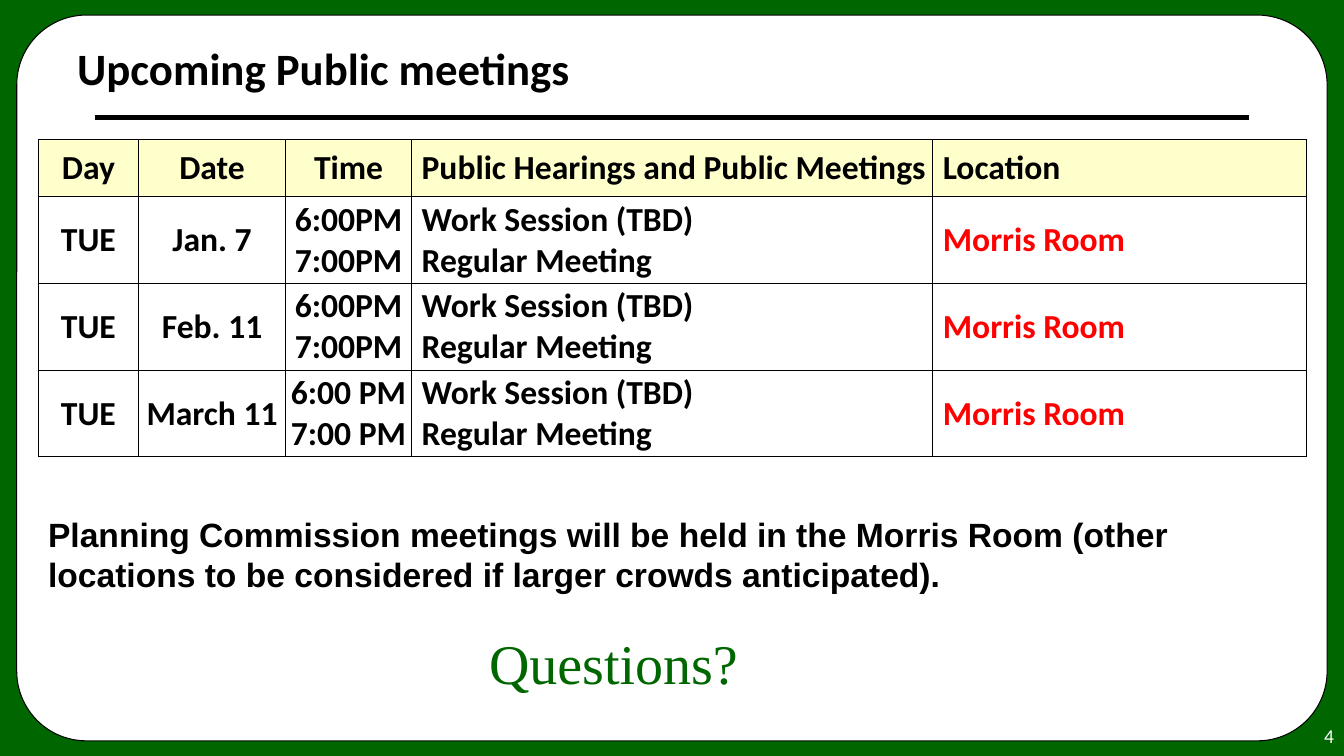
from lxml import etree
from pptx import Presentation
from pptx.dml.color import RGBColor
from pptx.enum import shapes, text
from pptx.oxml import ns
from pptx.util import Pt

GREEN = RGBColor(0x00, 0x66, 0x00)
CREAM = RGBColor(0xFF, 0xFF, 0xCC)
WHITE = RGBColor(0xFF, 0xFF, 0xFF)
BLACK = RGBColor(0x00, 0x00, 0x00)
RED = RGBColor(0xFF, 0x00, 0x00)

LEFT, CENTER, RIGHT = text.PP_ALIGN.LEFT, text.PP_ALIGN.CENTER, text.PP_ALIGN.RIGHT
TOP, MIDDLE = text.MSO_ANCHOR.TOP, text.MSO_ANCHOR.MIDDLE

COLUMN_WIDTHS = [71.7, 105, 90, 372.3, 267]
HEADER_HEIGHT, MEETING_HEIGHT = 40.4, 62
CENTERED_COLUMNS = 3
HEADINGS = ["Day", "Date", "Time", "Public Hearings and Public Meetings", "Location"]
SESSIONS = "Work Session (TBD)\nRegular Meeting"
MEETINGS = [
    ["TUE", date, times, SESSIONS, "Morris Room"]
    for date, times in [
        ("Jan. 7", "6:00PM\n7:00PM"),
        ("Feb. 11", "6:00PM\n7:00PM"),
        ("March 11", "6:00 PM\n7:00 PM"),
    ]
]


def write_text(frame, content, size=24, font="Calibri", color=BLACK, bold=False, align=LEFT):
    """Fill a text frame, one paragraph for each line of the content."""
    for index, line in enumerate(content.split("\n")):
        paragraph = frame.paragraphs[0] if index == 0 else frame.add_paragraph()
        paragraph.alignment = align
        run = paragraph.add_run()
        run.text = line
        run.font.name = font
        run.font.size = Pt(size)
        run.font.bold = bold
        run.font.color.rgb = color


def add_text(slide, box, content, anchor=TOP, wrap=True, **text_format):
    frame = slide.shapes.add_textbox(*map(Pt, box)).text_frame
    frame.word_wrap = wrap
    frame.vertical_anchor = anchor
    write_text(frame, content, **text_format)


def add_filled_shape(slide, preset, box, color):
    shape = slide.shapes.add_shape(preset, *map(Pt, box))
    shape.shadow.inherit = False
    shape.fill.solid()
    shape.fill.fore_color.rgb = color
    return shape


def add_border(slide, box):
    """Draw the green frame and the rounded white page inside it."""
    left, top, width, height = box
    frame = add_filled_shape(slide, shapes.MSO_SHAPE.FRAME, box, GREEN)
    frame.line.fill.background()
    page_box = (left + 12, top + 10.8, width - 24, height - 21.6)
    page = add_filled_shape(slide, shapes.MSO_SHAPE.ROUNDED_RECTANGLE, page_box, WHITE)
    page.adjustments[0] = 0.096
    page.line.color.rgb = BLACK
    page.line.width = Pt(0.75)


def add_heading(slide, box):
    """Write the title and draw the rule below it."""
    left, top, width, height = box
    add_text(slide, box, "Upcoming Public meetings", anchor=MIDDLE, size=32, bold=True)
    rule_top = Pt(top + height + 6)
    rule = slide.shapes.add_connector(
        shapes.MSO_CONNECTOR.STRAIGHT, Pt(left + 20), rule_top, Pt(left + width - 2), rule_top)
    rule.line.color.rgb = BLACK
    rule.line.width = Pt(3)
    etree.SubElement(rule._element.spPr, ns.qn("a:effectLst"))


def set_cell_borders(cell, color, width):
    properties = cell._tc.get_or_add_tcPr()
    for position, side in enumerate(["lnL", "lnR", "lnT", "lnB"]):
        line = etree.Element(ns.qn(f"a:{side}"), w=str(Pt(width)))
        fill = etree.SubElement(line, ns.qn("a:solidFill"))
        etree.SubElement(fill, ns.qn("a:srgbClr"), val=str(color))
        properties.insert(position, line)


def format_cell(cell, content, fill, color, centered):
    cell.margin_left = Pt(7.2 if centered is False else 0.7)
    cell.margin_right = cell.margin_top = Pt(0.7)
    cell.margin_bottom = 0
    cell.vertical_anchor = MIDDLE
    cell.fill.solid()
    cell.fill.fore_color.rgb = fill
    set_cell_borders(cell, BLACK, 0.5)
    write_text(cell.text_frame, content, color=color, bold=True,
               align=CENTER if centered else LEFT)


def add_schedule(slide, left, top):
    rows = [HEADINGS] + MEETINGS
    heights = [HEADER_HEIGHT] + [MEETING_HEIGHT] * len(MEETINGS)
    table = slide.shapes.add_table(
        len(rows), len(HEADINGS), Pt(left), Pt(top),
        Pt(sum(COLUMN_WIDTHS)), Pt(sum(heights))).table
    for column, width in zip(table.columns, COLUMN_WIDTHS):
        column.width = Pt(width)
    for row_index, (row, height) in enumerate(zip(rows, heights)):
        table.rows[row_index].height = Pt(height)
        is_header = row_index == 0
        for column_index, content in enumerate(row):
            is_place = not is_header and column_index == len(row) - 1
            format_cell(table.cell(row_index, column_index), content,
                        fill=CREAM if is_header else WHITE,
                        color=RED if is_place else BLACK,
                        centered=column_index < CENTERED_COLUMNS)


def add_closing(slide, left, top, width):
    """Write the note on the meeting place and the call for questions."""
    add_text(slide, (left + 315, top + 82, 204.5, 55.4), "Questions?", wrap=False,
             size=40, font="Times New Roman", color=GREEN)
    add_text(slide, (left, top, width, 65.5),
             "Planning Commission meetings will be held in the Morris Room "
             "(other locations to be considered if larger crowds anticipated).",
             font="Arial", bold=True)


def main():
    presentation = Presentation()
    presentation.slide_width, presentation.slide_height = Pt(960), Pt(540)
    slide = presentation.slides.add_slide(presentation.slide_layouts[6])
    add_border(slide, (0, 0, 960, 540))
    add_heading(slide, (48, 18, 846, 60))
    add_text(slide, (912, 513.4, 48, 24), "4", size=14, color=WHITE, align=RIGHT)
    add_schedule(slide, 27.3, 99.8)
    add_closing(slide, 27.3, 363.6, 906)
    presentation.save("out.pptx")


if __name__ == "__main__":
    main()
